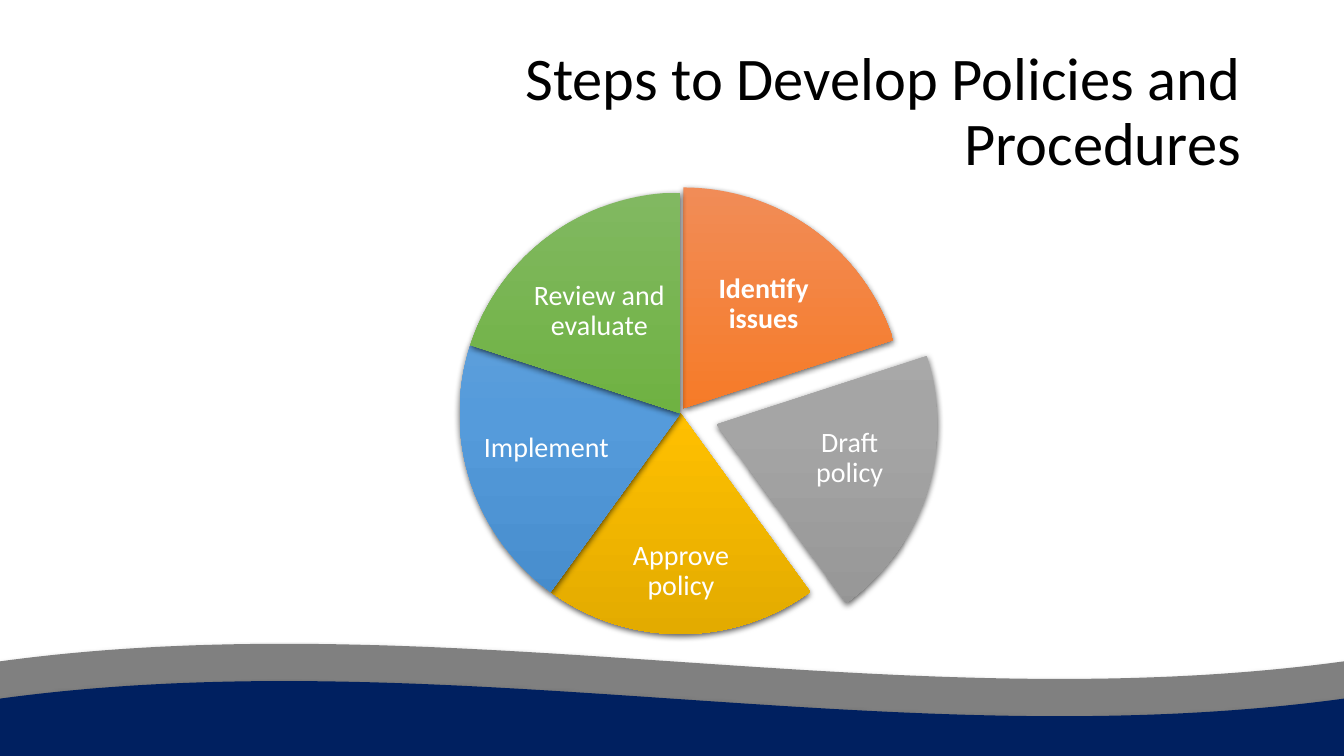
"""Build a slide with an exploded five-step wheel above two waves."""
from copy import deepcopy
from dataclasses import dataclass

from lxml.etree import SubElement
from pptx import Presentation
from pptx.dml.color import RGBColor
from pptx.enum.shapes import MSO_SHAPE
from pptx.enum.text import MSO_ANCHOR, PP_ALIGN
from pptx.oxml.ns import qn
from pptx.shapes.autoshape import Shape
from pptx.slide import Slide
from pptx.text.text import TextFrame
from pptx.util import Inches, Pt

SLIDE_WIDTH, SLIDE_HEIGHT = Inches(13.333), Inches(7.5)
FULL_TURN = 216
FIRST_ANGLE = 162


@dataclass(frozen=True)
class Area:
    """A rectangle in percent of the slide's width and height."""
    left: float
    top: float
    width: float
    height: float

    def moved(self, right: float, down: float) -> "Area":
        return Area(self.left + right, self.top + down, self.width, self.height)

    def lengths(self) -> tuple[int, int, int, int]:
        return (
            round(SLIDE_WIDTH * self.left / 100),
            round(SLIDE_HEIGHT * self.top / 100),
            round(SLIDE_WIDTH * self.width / 100),
            round(SLIDE_HEIGHT * self.height / 100),
        )


@dataclass(frozen=True)
class Shadow:
    opacity: int
    blur: float
    distance: float


@dataclass(frozen=True)
class Theme:
    font: str = "Calibri"
    title_size: float = 43.2
    label_size: float = 20
    title_color: str = "000000"
    label_color: str = "FFFFFF"
    gray: str = "808080"
    navy: str = "002060"
    orange: tuple[str, ...] = ("F18C57", "F67B28", "E56C19")
    silver: tuple[str, ...] = ("AFAFAF", "A5A5A5", "939393")
    gold: tuple[str, ...] = ("FFC64B", "FFC000", "E3AB00")
    blue: tuple[str, ...] = ("71A6DB", "559BDB", "448ACA")
    green: tuple[str, ...] = ("81B861", "6FB242", "62A336")
    wave_shadow: Shadow = Shadow(32, 3.5, 2.2)
    slice_shadow: Shadow = Shadow(63, 4.5, 1.5)


@dataclass(frozen=True)
class Wave:
    top: float
    color: str


@dataclass(frozen=True)
class Step:
    text: str
    label: Area
    gradient: tuple[str, ...]
    offset: tuple[float, float] = (0, 0)
    bold: bool = False


THEME = Theme()
TITLE = Area(21.83, 5.33, 71.25, 19.33)
WHEEL = Area(34.2, 25.47, 32.85, 58.4)
WAVES = [Wave(85.07, THEME.gray), Wave(90, THEME.navy)]
STEPS = [
    Step("Identify issues", Area(51.23, 33.47, 11.18, 13.6), THEME.orange, (0.22, -0.67), True),
    Step("Draft policy", Area(58.35, 53.33, 9.75, 14.67), THEME.silver, (2.7, 1.47)),
    Step("Approve policy", Area(44.78, 69.33, 11.78, 12.53), THEME.gold),
    Step("Implement", Area(35.78, 52, 9.75, 14.67), THEME.blue),
    Step("Review and evaluate", Area(39, 34.4, 11.18, 13.6), THEME.green),
]


def add_shadow(shape: Shape, shadow: Shadow) -> None:
    shape.shadow.inherit = False
    effects = shape._element.spPr.find(qn("a:effectLst"))
    outer = SubElement(
        effects, qn("a:outerShdw"), blurRad=str(Pt(shadow.blur)),
        dist=str(Pt(shadow.distance)), dir="5400000", algn="ctr", rotWithShape="0",
    )
    color = SubElement(outer, qn("a:srgbClr"), val="000000")
    SubElement(color, qn("a:alpha"), val=str(shadow.opacity * 1000))


def fill_gradient(shape: Shape, colors: tuple[str, ...]) -> None:
    shape.fill.gradient()
    shape.fill.gradient_angle = 270
    stop_list = shape._element.spPr.find(".//" + qn("a:gsLst"))
    stop_list.insert(1, deepcopy(stop_list[0]))
    for index, (stop, color) in enumerate(zip(shape.fill.gradient_stops, colors)):
        stop.position = index / 2
        stop.color.rgb = RGBColor.from_string(color)


def write_text(
    frame: TextFrame, text: str, size: float, color: str,
    alignment: PP_ALIGN, bold: bool = False,
) -> None:
    frame.text = text
    frame.word_wrap = True
    frame.vertical_anchor = MSO_ANCHOR.MIDDLE
    paragraph = frame.paragraphs[0]
    paragraph.alignment = alignment
    paragraph.line_spacing = 0.9
    font = paragraph.runs[0].font
    font.name, font.size, font.bold = THEME.font, Pt(size), bold
    font.color.rgb = RGBColor.from_string(color)


def add_wave(slide: Slide, wave: Wave) -> None:
    area = Area(0, wave.top, 100, 19.33)
    shape = slide.shapes.add_shape(MSO_SHAPE.WAVE, *area.lengths())
    shape.fill.solid()
    shape.fill.fore_color.rgb = RGBColor.from_string(wave.color)
    shape.line.fill.background()
    add_shadow(shape, THEME.wave_shadow)


def add_step(slide: Slide, step: Step, index: int) -> None:
    shape = slide.shapes.add_shape(MSO_SHAPE.PIE, *WHEEL.moved(*step.offset).lengths())
    sweep = FULL_TURN / len(STEPS)
    for edge in range(2):
        shape.adjustments[edge] = round((FIRST_ANGLE + sweep * (index + edge)) % FULL_TURN, 2)
    fill_gradient(shape, step.gradient)
    shape.line.fill.background()
    add_shadow(shape, THEME.slice_shadow)

    frame = slide.shapes.add_textbox(*step.label.lengths()).text_frame
    frame.margin_left = frame.margin_right = Inches(0.03)
    frame.margin_top = frame.margin_bottom = Inches(0.03)
    write_text(frame, step.text, THEME.label_size, THEME.label_color, PP_ALIGN.CENTER, step.bold)


def main() -> None:
    presentation = Presentation()
    presentation.slide_width, presentation.slide_height = SLIDE_WIDTH, SLIDE_HEIGHT
    slide = presentation.slides.add_slide(presentation.slide_layouts[5])
    title = slide.shapes.title
    title.left, title.top, title.width, title.height = TITLE.lengths()
    write_text(
        title.text_frame, "Steps to Develop Policies and Procedures",
        THEME.title_size, THEME.title_color, PP_ALIGN.RIGHT,
    )
    for wave in WAVES:
        add_wave(slide, wave)
    for index, step in enumerate(STEPS):
        add_step(slide, step, index)
    presentation.save("out.pptx")


if __name__ == "__main__":
    main()
